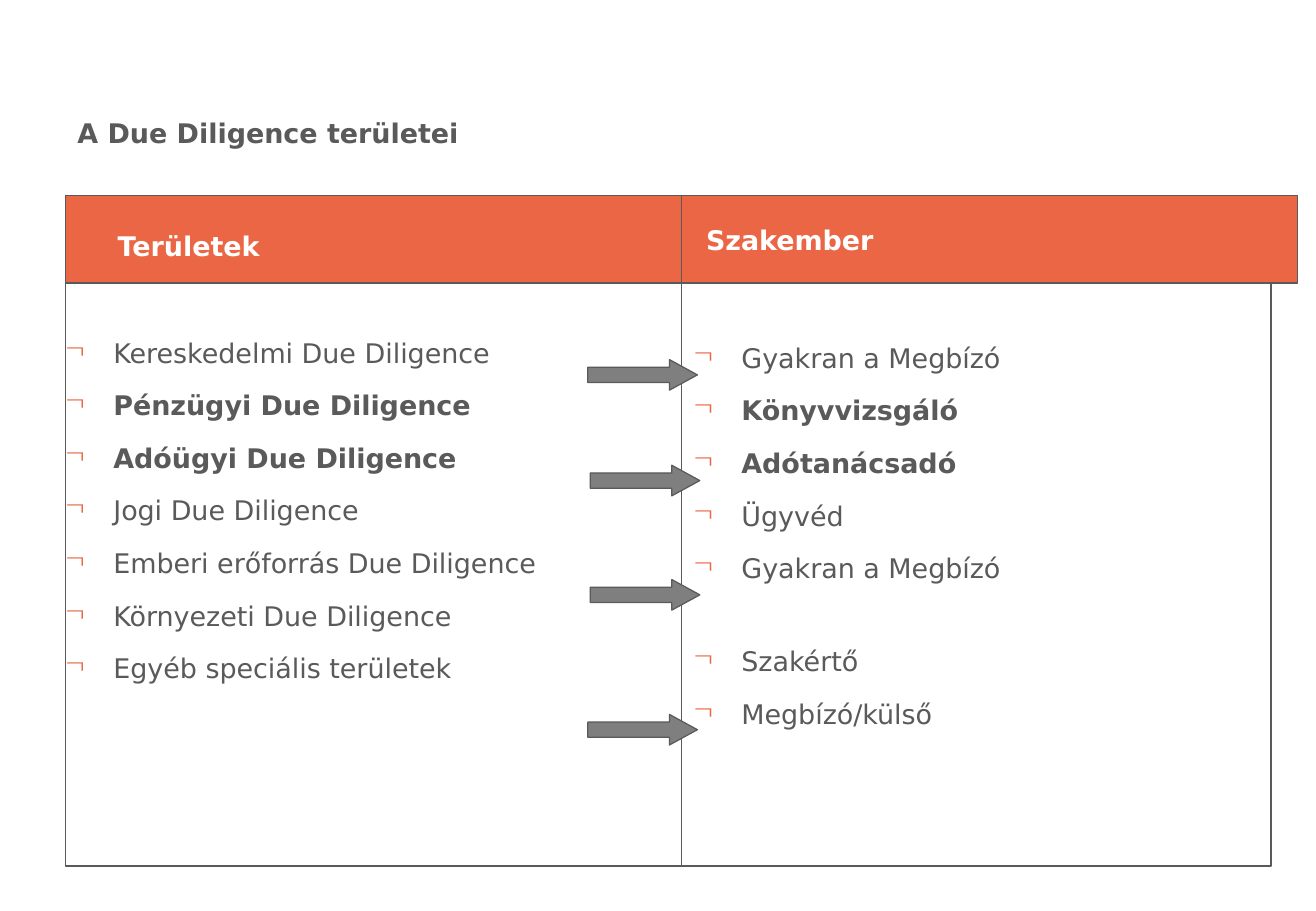
from lxml import etree
from pptx import Presentation
from pptx.dml.color import RGBColor
from pptx.enum.shapes import MSO_SHAPE
from pptx.enum.text import MSO_ANCHOR, PP_ALIGN
from pptx.oxml.ns import qn
from pptx.util import Cm, Pt

FONT = "DejaVu Sans"
GREY, ORANGE, ARROW_GREY, WHITE = "5A5A5A", "EA6645", "7F7F7F", "FFFFFF"

TITLE = "A Due Diligence területei"
AREAS = [
    ("Kereskedelmi Due Diligence", False),
    ("Pénzügyi Due Diligence", True),
    ("Adóügyi Due Diligence", True),
    ("Jogi Due Diligence", False),
    ("Emberi erőforrás Due Diligence", False),
    ("Környezeti Due Diligence", False),
    ("Egyéb speciális területek", False),
]
EXPERTS = [
    ("Gyakran a Megbízó", False),
    ("Könyvvizsgáló", True),
    ("Adótanácsadó", True),
    ("Ügyvéd", False),
    ("Gyakran a Megbízó", False),
    ("Szakértő", False),
    ("Megbízó/külső", False),
]
ARROWS = [(12.29, 7.52), (12.34, 9.73), (12.34, 12.12), (12.29, 14.94)]

LEFT, COLUMN_WIDTH = 1.37, 12.88
MIDDLE = LEFT + COLUMN_WIDTH
HEADER_TOP, HEADER_HEIGHT = 4.09, 1.83
BODY_TOP, BODY_HEIGHT = 5.28, 12.83
HEADERS = [("Területek", LEFT, 1.09, 0.25), ("Szakember", MIDDLE, 0.51, 0)]


def color(value):
    return RGBColor.from_string(value)


def add_block(kind, left, top, width, height, fill=None):
    shape = slide.shapes.add_shape(kind, Cm(left), Cm(top), Cm(width), Cm(height))
    shape.shadow.inherit = False
    if fill:
        shape.fill.solid()
        shape.fill.fore_color.rgb = color(fill)
    else:
        shape.fill.background()
    shape.line.color.rgb = color(GREY)
    shape.line.width = Pt(0.75)
    return shape


def add_text_box(left, top, width, height):
    shape = slide.shapes.add_textbox(Cm(left), Cm(top), Cm(width), Cm(height))
    shape.text_frame.word_wrap = True
    return shape


def set_insets(frame, left=0, top=0):
    frame.margin_left, frame.margin_top = Cm(left), Cm(top)
    frame.margin_right = frame.margin_bottom = 0


def style(paragraph, font_color, bold):
    paragraph.alignment = PP_ALIGN.LEFT
    for run in paragraph.runs:
        run.font.name = FONT
        run.font.size = Pt(16)
        run.font.bold = bold
        run.font.color.rgb = color(font_color)


def add_bullet(paragraph):
    properties = paragraph._p.get_or_add_pPr()
    properties.set("marL", str(Cm(1)))
    properties.set("indent", str(Cm(-1)))
    bullet_color = etree.SubElement(properties, qn("a:buClr"))
    etree.SubElement(bullet_color, qn("a:srgbClr")).set("val", ORANGE)
    etree.SubElement(properties, qn("a:buSzPct")).set("val", "120000")
    etree.SubElement(properties, qn("a:buChar")).set("char", "¬")


def fill_list(frame, items, before, after, wide_gaps=()):
    frame.text = "\n".join(text for text, bold in items)
    frame.vertical_anchor = MSO_ANCHOR.TOP
    for index, (paragraph, (text, bold)) in enumerate(zip(frame.paragraphs, items)):
        add_bullet(paragraph)
        if index:
            paragraph.space_before = Pt(30 if index in wide_gaps else before)
        paragraph.space_after = Pt(after)
        style(paragraph, GREY, bold)


presentation = Presentation()
presentation.slide_width, presentation.slide_height = Cm(27.51), Cm(19.05)
slide = presentation.slides.add_slide(presentation.slide_layouts[6])

title = add_text_box(LEFT, 2.31, 24.84, 0.94)
title.text_frame.text = TITLE
style(title.text_frame.paragraphs[0], GREY, True)

areas = add_block(MSO_SHAPE.RECTANGLE, LEFT, BODY_TOP, COLUMN_WIDTH, BODY_HEIGHT)
set_insets(areas.text_frame, top=1.75)
fill_list(areas.text_frame, AREAS, 12, 0)

add_block(MSO_SHAPE.RECTANGLE, MIDDLE, BODY_TOP, 12.32, BODY_HEIGHT)
experts = add_text_box(MIDDLE, 7.01, COLUMN_WIDTH, 9.9)
fill_list(experts.text_frame, EXPERTS, 6, 6, wide_gaps=(5,))

for text, left, inset_left, inset_top in HEADERS:
    header = add_block(MSO_SHAPE.RECTANGLE, left, HEADER_TOP, COLUMN_WIDTH, HEADER_HEIGHT, ORANGE)
    header.text_frame.text = text
    header.text_frame.vertical_anchor = MSO_ANCHOR.MIDDLE
    set_insets(header.text_frame, inset_left, inset_top)
    style(header.text_frame.paragraphs[0], WHITE, True)

for left, top in ARROWS:
    arrow = add_block(MSO_SHAPE.RIGHT_ARROW, left, top, 2.29, 0.64, ARROW_GREY)
    arrow.adjustments[0], arrow.adjustments[1] = 0.5, 0.915

presentation.save("out.pptx")
